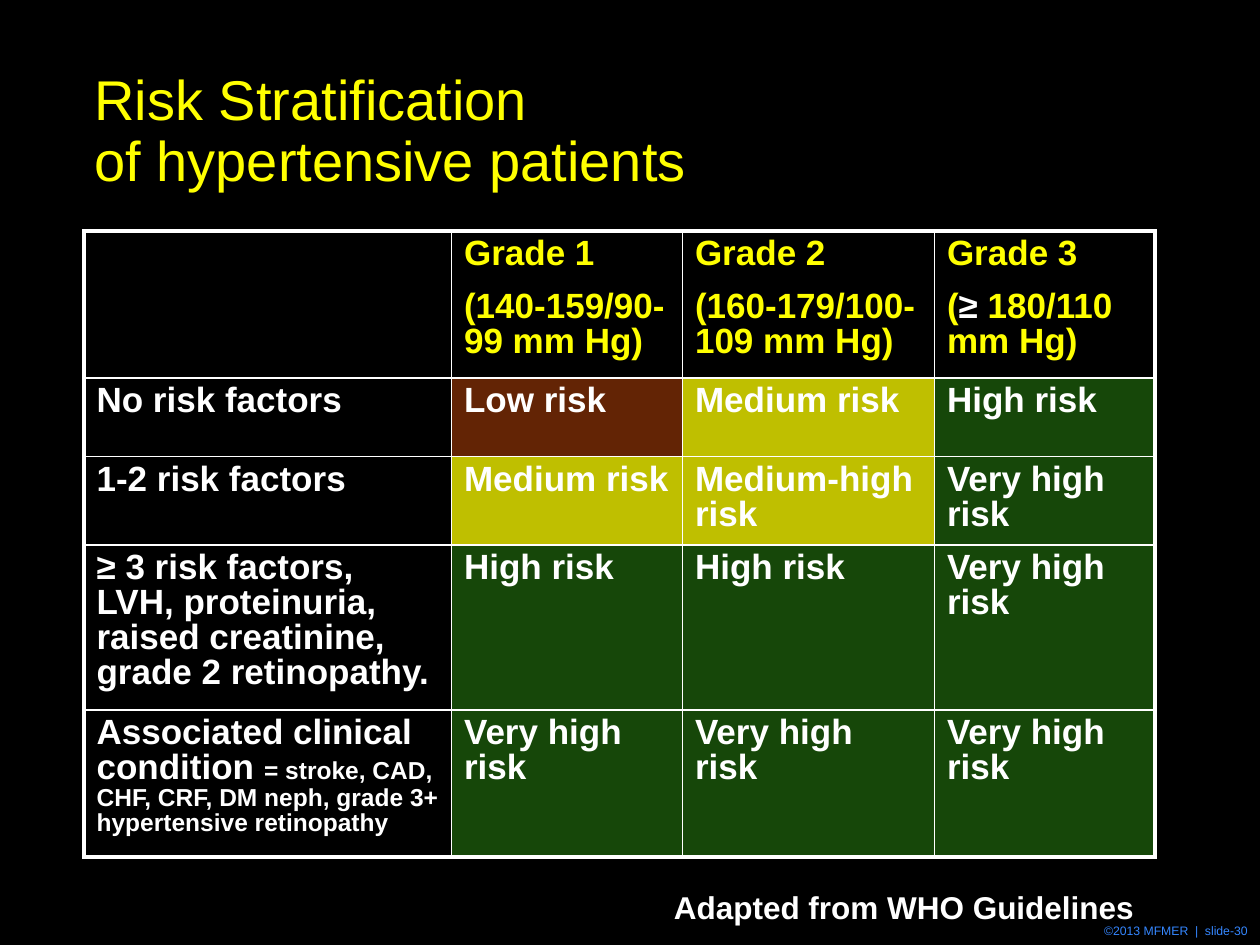
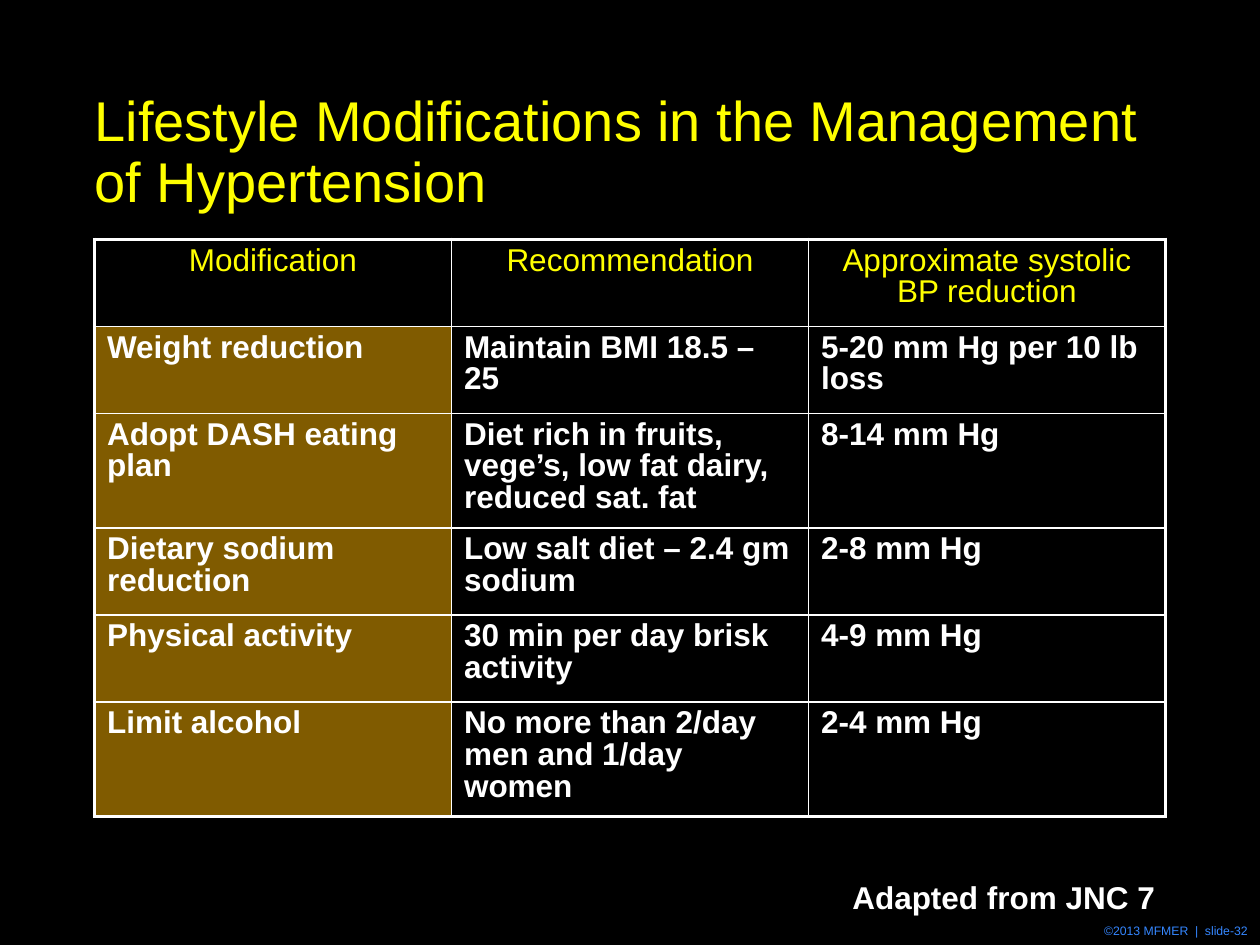
from lxml.etree import SubElement
from pptx import Presentation
from pptx.dml.color import RGBColor
from pptx.enum.text import MSO_ANCHOR as Anchor, MSO_AUTO_SIZE as AutoSize, PP_ALIGN as Align
from pptx.oxml.ns import qn
from pptx.util import Pt

# Shared style
FONT = "Arial"
BLACK, WHITE, YELLOW, BLUE = "000000", "FFFFFF", "FFFF00", "3587FF"
OLIVE = "BFBF00"
RUST, GREEN, AMBER = ("C7490B", 50), ("2D8E12", 50), ("FFB600", 50)  # colour, opacity %
PLAIN_TABLE = "{2D5ABB26-0587-4C30-8999-92F81FD0307C}"
THIN, THICK = 1, 2.25


def rgb(hex_text):
    return RGBColor.from_string(hex_text)


class DeckBuilder:
    def __init__(self):
        self.deck = Presentation()
        self.deck.slide_width, self.deck.slide_height = Pt(720), Pt(540)
        fill = self.deck.slide_master.background.fill
        fill.solid()
        fill.fore_color.rgb = rgb(BLACK)
        self.page = None

    def new_page(self, title_lines, title_top, number):
        self.page = self.deck.slides.add_slide(self.deck.slide_layouts[5])
        self.title(title_lines, title_top)
        self.text(f"©2013 MFMER  |  slide-{number}", (552, 524, 168, 16), 7, BLUE,
                  align=Align.RIGHT, anchor=Anchor.MIDDLE)

    def span(self, para, text, size, color, bold=False):
        run = para.add_run()
        run.text = text
        font = run.font
        font.name, font.size, font.bold = FONT, Pt(size), bold
        font.color.rgb = rgb(color)

    def title(self, lines, top):
        box = self.page.shapes.title
        box.left, box.top, box.width, box.height = Pt(54), Pt(top), Pt(612), Pt(90)
        frame = box.text_frame
        frame.auto_size, frame.word_wrap = AutoSize.NONE, True
        frame.vertical_anchor = Anchor.BOTTOM
        frame.margin_left = frame.margin_right = 0
        para = frame.paragraphs[0]
        para.alignment, para.line_spacing = Align.LEFT, 0.9
        for index, line in enumerate(lines):
            if index:
                para.add_line_break()
            self.span(para, line, 32, YELLOW)

    def text(self, words, place, size, color, bold=False, align=Align.LEFT, anchor=Anchor.TOP):
        box = self.page.shapes.add_textbox(*map(Pt, place))
        frame = box.text_frame
        frame.word_wrap, frame.vertical_anchor = True, anchor
        para = frame.paragraphs[0]
        para.alignment = align
        self.span(para, words, size, color, bold)

    def table(self, left, top, widths, heights):
        frame = self.page.shapes.add_table(
            len(heights), len(widths), Pt(left), Pt(top), Pt(sum(widths)), Pt(sum(heights)))
        table = frame.table
        table.first_row = table.horz_banding = False
        for style in table._tbl.iter(qn("a:tableStyleId")):
            style.text = PLAIN_TABLE
        for column, width in zip(table.columns, widths):
            column.width = Pt(width)
        for row, height in zip(table.rows, heights):
            row.height = Pt(height)
        # Thick outer frame, thin inner rules
        last_row, last_column = len(heights) - 1, len(widths) - 1
        for r in range(len(heights)):
            for c in range(len(widths)):
                outer = {"L": c == 0, "R": c == last_column, "T": r == 0, "B": r == last_row}
                self.borders(table.cell(r, c), outer)
        return table

    def borders(self, cell, outer):
        props = cell._tc.get_or_add_tcPr()
        for side, is_outer in outer.items():
            line = SubElement(props, qn(f"a:ln{side}"), w=str(Pt(THICK if is_outer else THIN)))
            SubElement(SubElement(line, qn("a:solidFill")), qn("a:srgbClr"), val=WHITE)

    def cell(self, cell, paragraphs, fill=None, align=Align.LEFT):
        """Each paragraph is a list of (text, size, color, bold) spans."""
        if fill is None:
            cell.fill.background()
        else:
            color, opacity = fill if isinstance(fill, tuple) else (fill, 100)
            cell.fill.solid()
            cell.fill.fore_color.rgb = rgb(color)
            if opacity < 100:
                tint = cell._tc.tcPr.find(qn("a:solidFill")).find(qn("a:srgbClr"))
                SubElement(tint, qn("a:alpha"), val=str(opacity * 1000))
        frame = cell.text_frame
        for index, spans in enumerate(paragraphs):
            para = frame.add_paragraph() if index else frame.paragraphs[0]
            para.alignment, para.line_spacing = align, 0.9
            if index:
                para.space_before = Pt(10)
            for span in spans:
                self.span(para, *span)


def risk_page(builder):
    builder.new_page(["Risk Stratification", "of hypertensive patients"], 24, 30)
    table = builder.table(48, 132, [210, 132, 144, 126], [84, 45, 50.4, 94.3, 84])

    # Blood pressure grades
    grades = [
        [("(140-159/90-99 mm Hg)", YELLOW)],
        [("(160-179/100-109 mm Hg)", YELLOW)],
        [("(", YELLOW), ("≥", WHITE), (" 180/110 mm Hg)", YELLOW)],
    ]
    builder.cell(table.cell(0, 0), [])
    for number, limits in enumerate(grades, 1):
        builder.cell(table.cell(0, number), [
            [(f"Grade {number}", 20, YELLOW, True)],
            [(text, 20, color, True) for text, color in limits]])

    # Risk levels for each patient group
    level_fill = {"Low risk": RUST, "Medium risk": OLIVE, "Medium-high risk": OLIVE,
                  "High risk": GREEN, "Very high risk": GREEN}
    groups = [
        ([("No risk factors", 20)], ["Low risk", "Medium risk", "High risk"]),
        ([("1-2 risk factors", 20)], ["Medium risk", "Medium-high risk", "Very high risk"]),
        ([("≥ 3 risk factors, LVH, proteinuria, raised creatinine, grade 2 retinopathy.", 20)],
         ["High risk", "High risk", "Very high risk"]),
        ([("Associated clinical condition ", 20),
          ("= stroke, CAD, CHF, CRF, DM neph, grade 3+ hypertensive retinopathy", 14)],
         ["Very high risk"] * 3),
    ]
    for r, (group, levels) in enumerate(groups, 1):
        builder.cell(table.cell(r, 0), [[(text, size, WHITE, True) for text, size in group]])
        for c, level in enumerate(levels, 1):
            builder.cell(table.cell(r, c), [[(level, 20, WHITE, True)]], level_fill[level])

    builder.text("Adapted from WHO Guidelines", (378, 504, 306, 22), 18, WHITE, bold=True)


def lifestyle_page(builder):
    builder.new_page(["Lifestyle Modifications in the Management of Hypertension"], 36, 32)
    short, tall = 49.7, 65.5
    table = builder.table(54, 136.8, [204] * 3, [short, short, tall, short, short, tall])

    # Column heads
    heads = ["Modification", "Recommendation", "Approximate systolic BP reduction"]
    for c, head in enumerate(heads):
        builder.cell(table.cell(0, c), [[(head, 18, YELLOW)]], align=Align.CENTER)

    # Modifications
    rows = [
        ("Weight reduction", "Maintain BMI 18.5 – 25", "5-20 mm Hg per 10 lb loss"),
        ("Adopt DASH eating plan",
         "Diet rich in fruits, vege’s, low fat dairy, reduced sat. fat", "8-14 mm Hg"),
        ("Dietary sodium reduction", "Low salt diet – 2.4 gm sodium", "2-8 mm Hg"),
        ("Physical activity", "30 min per day brisk activity", "4-9 mm Hg"),
        ("Limit alcohol", "No more than 2/day men and 1/day women", "2-4 mm Hg"),
    ]
    for r, row in enumerate(rows, 1):
        for c, words in enumerate(row):
            builder.cell(table.cell(r, c), [[(words, 18, WHITE, True)]],
                         AMBER if c == 0 else None)

    builder.text("Adapted from JNC 7", (480, 498, 210, 22), 18, WHITE, bold=True)


def main():
    builder = DeckBuilder()
    risk_page(builder)
    lifestyle_page(builder)
    builder.deck.save("out.pptx")


if __name__ == "__main__":
    main()
